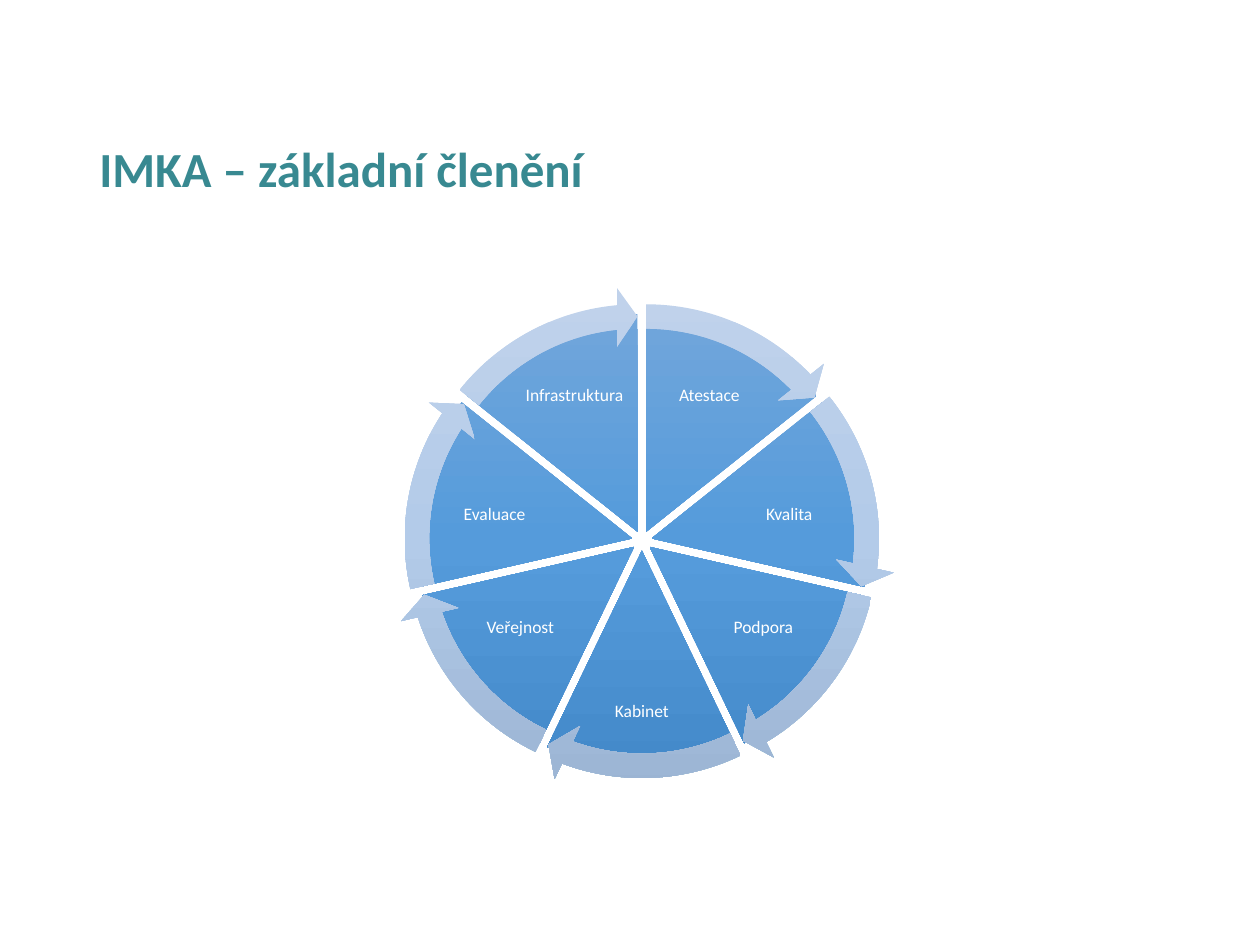
"""Build the slide with the seven-part cycle of IMKA."""
from copy import deepcopy
from math import cos, pi, sin
from typing import NamedTuple

from pptx import Presentation
from pptx.dml.color import RGBColor as Rgb
from pptx.enum.shapes import MSO_SHAPE as Kind
from pptx.enum.text import MSO_ANCHOR as Anchor, PP_ALIGN as Align
from pptx.oxml.ns import qn
from pptx.util import Cm, Pt

HUES = {
    "title": "388991",
    "label": "FFFFFF",
    "pie": ("71A6DB", "559BDB", "448ACA"),
    "arrow": ("C0D2EB", "B3CBE9", "9BB4D3"),
}
FONT = "Calibri"
MID_X, MID_Y = 12.94, 10.9
PIE, RING, SHIFT = 8.79, 9.86, 0.2
TURN, TOP = 216, 162


class Part(NamedTuple):
    """A wedge label with its offset from the centre and its size in cm."""
    text: str
    dx: float
    dy: float
    wide: float
    high: float


PARTS = [
    Part("Atestace", 1.36, -2.92, 2.08, 1.68),
    Part("Kvalita", 2.97, -0.53, 2.41, 1.47),
    Part("Podpora", 2.45, 1.75, 2.08, 1.63),
    Part("Kabinet", 0, 3.45, 2.03, 1.47),
    Part("Veřejnost", -2.45, 1.75, 2.08, 1.63),
    Part("Evaluace", -2.97, -0.53, 2.41, 1.47),
    Part("Infrastruktura", -1.36, -2.92, 2.08, 1.68),
]
STEP = TURN / len(PARTS)


def box(x: float, y: float, wide: float, high: float) -> tuple:
    """Return left, top, width and height of a box centred on x, y."""
    return Cm(x - wide / 2), Cm(y - high / 2), Cm(wide), Cm(high)


def write(frame, text: str, size: float, hue: str, bold: bool, align) -> None:
    """Write one run of text into a frame."""
    frame.word_wrap = True
    frame.vertical_anchor = Anchor.MIDDLE
    para = frame.paragraphs[0]
    para.alignment = align
    para.line_spacing = 0.9
    run = para.add_run()
    run.text = text
    font = run.font
    font.name, font.size, font.bold = FONT, Pt(size), bold
    font.color.rgb = Rgb.from_string(hue)


def shade(shape, hues: tuple) -> None:
    """Fill a shape from top to bottom with three even colour stops."""
    fill = shape.fill
    fill.gradient()
    fill.gradient_angle = 270
    stops = shape._element.spPr.find(".//" + qn("a:gsLst"))
    stops.append(deepcopy(stops[-1]))
    for i, (stop, hue) in enumerate(zip(fill.gradient_stops, hues)):
        stop.position = i / 2
        stop.color.rgb = Rgb.from_string(hue)


def sector(group, kind, i: int, size: float, hues: tuple, bends: list) -> None:
    """Draw a round shape pushed outwards along the middle of part i."""
    turn = (2 * i + 1) * pi / len(PARTS)
    x, y = MID_X + SHIFT * sin(turn), MID_Y - SHIFT * cos(turn)
    shape = group.shapes.add_shape(kind, *box(x, y, size, size))
    for k, bend in enumerate(bends):
        shape.adjustments[k] = bend
    shape.shadow.inherit = False
    shape.line.fill.background()
    shade(shape, hues)


def label(group, part: Part) -> None:
    """Write the name of a part on its wedge."""
    place = box(MID_X + part.dx, MID_Y + part.dy, part.wide, part.high)
    frame = group.shapes.add_textbox(*place).text_frame
    frame.margin_left = frame.margin_right = Cm(0.03)
    frame.margin_top = frame.margin_bottom = Cm(0.03)
    write(frame, part.text, 10, HUES["label"], False, Align.CENTER)


def main() -> None:
    """Build and save the slide."""
    deck = Presentation()
    deck.slide_width, deck.slide_height = Cm(25.4), Cm(19.05)
    slide = deck.slides.add_slide(deck.slide_layouts[5])

    title = slide.shapes.title
    title.left, title.top = Cm(1.75), Cm(2.21)
    title.width, title.height = Cm(21.9), Cm(2.49)
    write(title.text_frame, "IMKA – základní členění", 28, HUES["title"],
          True, Align.LEFT)

    group = slide.shapes.add_group_shape()
    for i, part in enumerate(PARTS):
        ends = [(TOP + k * STEP) % TURN for k in (i, i + 1)]
        sector(group, Kind.PIE, i, PIE, HUES["pie"], ends)
        label(group, part)
    for i in range(len(PARTS)):
        start = (TOP + i * STEP) % TURN
        bends = [0.05, 3.28, (start + 27.58) % TURN, start, 0.06]
        sector(group, Kind.CIRCULAR_ARROW, i, RING, HUES["arrow"], bends)

    deck.save("out.pptx")


if __name__ == "__main__":
    main()
